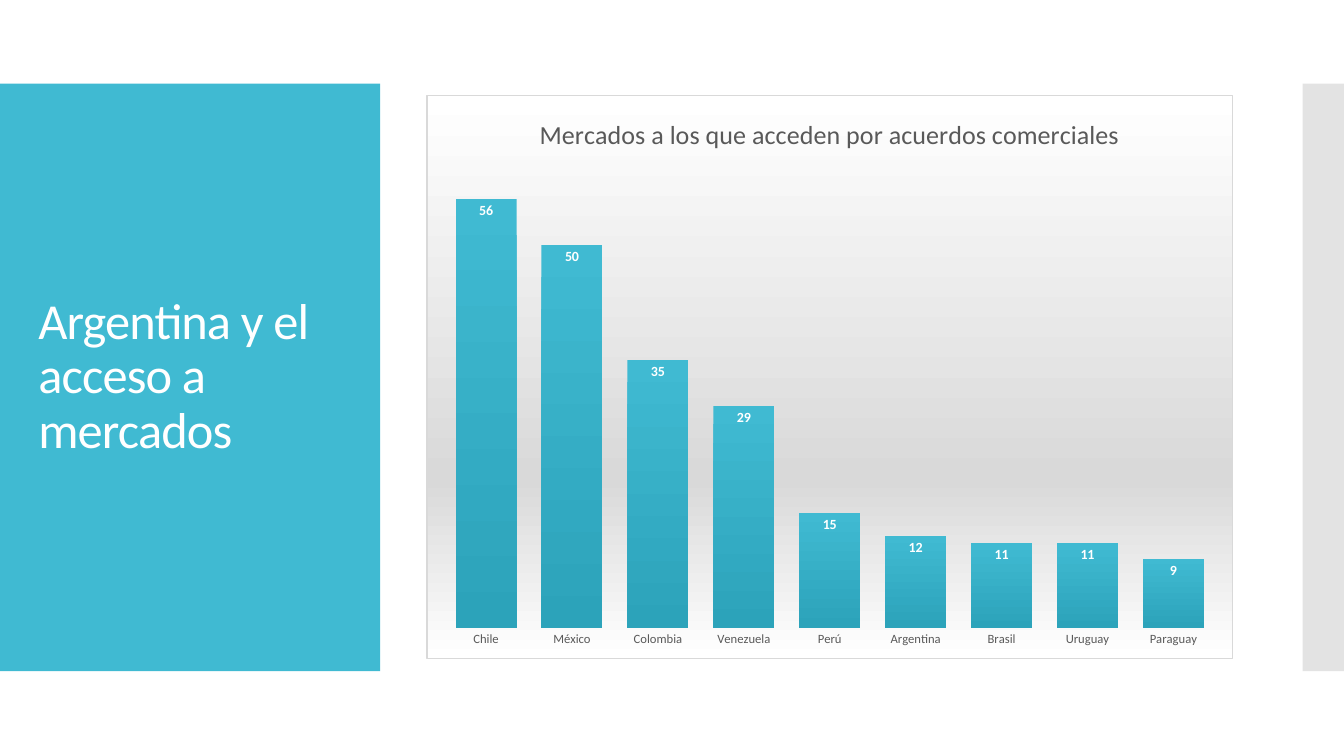
from lxml.etree import SubElement
from pptx import Presentation
from pptx.chart.data import CategoryChartData
from pptx.dml.color import RGBColor
from pptx.enum.chart import XL_CHART_TYPE, XL_LABEL_POSITION, XL_TICK_LABEL_POSITION, XL_TICK_MARK
from pptx.enum.shapes import MSO_SHAPE
from pptx.enum.text import MSO_ANCHOR, PP_ALIGN
from pptx.oxml import parse_xml
from pptx.oxml.ns import nsdecls, qn
from pptx.util import Inches, Pt

COLORS = {
    "teal": "40BAD2", "deep_teal": "2CA3BA", "white": "FFFFFF",
    "silver": "D9D9D9", "edge": "C8C8C8", "text": "595959", "black": "000000",
}
FONT = "Calibri"
MARKETS = {
    "Chile": 56, "México": 50, "Colombia": 35, "Venezuela": 29, "Perú": 15,
    "Argentina": 12, "Brasil": 11, "Uruguay": 11, "Paraguay": 9,
}
PLOT_LAYOUT = {"x": 0.02, "y": 0.13, "w": 0.96, "h": 0.815}


def rgb(name):
    """Return the named colour."""
    return RGBColor.from_string(COLORS[name])


def set_font(font, size, color, bold=False):
    """Format a font."""
    font.name = FONT
    font.size = Pt(size)
    font.bold = bold
    font.color.rgb = rgb(color)


def gradient_xml(stops):
    """Return the XML of a downward gradient from (percent, colour) stops."""
    stop_xml = "".join(
        f'<a:gs pos="{percent * 1000}"><a:srgbClr val="{COLORS[color]}"/></a:gs>'
        for percent, color in stops
    )
    return (f'<a:gradFill {nsdecls("a")}><a:gsLst>{stop_xml}</a:gsLst>'
            '<a:lin ang="5400000" scaled="0"/></a:gradFill>')


def add_band(slide, left, width, color, opacity=100):
    """Add a full-height side band behind the title."""
    band = slide.shapes.add_shape(
        MSO_SHAPE.RECTANGLE, Inches(left), Inches(0.83), Inches(width), Inches(5.83))
    band.shadow.inherit = False
    band.fill.solid()
    band.fill.fore_color.rgb = rgb(color)
    band.line.fill.background()
    if opacity < 100:
        fill_color = band._element.spPr.find(".//" + qn("a:srgbClr"))
        SubElement(fill_color, qn("a:alpha"), val=str(opacity * 1000))
    slide.shapes.title._element.addprevious(band._element)


def format_title(title, text):
    """Place and format the slide title."""
    title.left, title.top = Inches(0.28), Inches(1.23)
    title.width, title.height = Inches(3.22), Inches(5.03)
    frame = title.text_frame
    frame.text = text
    frame.word_wrap = True
    frame.vertical_anchor = MSO_ANCHOR.MIDDLE
    paragraph = frame.paragraphs[0]
    paragraph.alignment = PP_ALIGN.LEFT
    paragraph.line_spacing = 0.9
    set_font(paragraph.font, 36, "white")
    paragraph.runs[0]._r.get_or_add_rPr().set("spc", "-60")


def style_chart_area(chart):
    """Give the chart its background, border and plot position."""
    chart_space = chart._chartSpace
    border = (f'<a:ln {nsdecls("a")} w="9525"><a:solidFill>'
              f'<a:srgbClr val="{COLORS["silver"]}"/></a:solidFill></a:ln>')
    background = gradient_xml([(0, "white"), (68, "silver"), (100, "white")])
    chart_space.find(qn("c:chart")).addnext(
        parse_xml(f'<c:spPr {nsdecls("c")}>{background}{border}</c:spPr>'))

    plot_area = chart_space.find(".//" + qn("c:plotArea"))
    for automatic_layout in plot_area.findall(qn("c:layout")):
        plot_area.remove(automatic_layout)
    places = "".join(f'<c:{key} val="{value}"/>' for key, value in PLOT_LAYOUT.items())
    plot_area.insert(0, parse_xml(
        f'<c:layout {nsdecls("c")}><c:manualLayout><c:layoutTarget val="inner"/>'
        f'<c:xMode val="edge"/><c:yMode val="edge"/>{places}</c:manualLayout></c:layout>'))


def format_axes(chart):
    """Show only the country names and hide the value axis."""
    countries = chart.category_axis
    countries.major_tick_mark = XL_TICK_MARK.NONE
    countries.format.line.fill.background()
    set_font(countries.tick_labels.font, 9, "text")
    scale = chart.value_axis
    scale.minimum_scale, scale.maximum_scale = 0, 60
    scale.has_major_gridlines = False
    scale.tick_label_position = XL_TICK_LABEL_POSITION.NONE
    scale.visible = False


def add_market_chart(slide, heading):
    """Add the column chart of markets reached by each country."""
    data = CategoryChartData()
    data.categories = list(MARKETS)
    data.add_series("Series 1", list(MARKETS.values()))
    chart = slide.shapes.add_chart(
        XL_CHART_TYPE.COLUMN_CLUSTERED,
        Inches(4.23), Inches(0.94), Inches(8), Inches(5.6), data).chart
    set_font(chart.font, 10, "black")
    chart.has_legend = False
    chart.has_title = True
    chart.chart_title.include_in_layout = False
    chart.chart_title.text_frame.text = heading
    set_font(chart.chart_title.text_frame.paragraphs[0].font, 18.6, "text")
    format_axes(chart)
    style_chart_area(chart)

    plot = chart.plots[0]
    plot.gap_width = 41
    plot.vary_by_categories = False
    columns = plot.series[0]
    columns._element.get_or_add_spPr().append(
        parse_xml(gradient_xml([(0, "teal"), (100, "deep_teal")])))
    labels = columns.data_labels
    labels.show_value = True
    labels.position = XL_LABEL_POSITION.INSIDE_END
    set_font(labels.font, 10, "white", bold=True)


def main():
    """Build and save the slide."""
    presentation = Presentation()
    presentation.slide_width, presentation.slide_height = Inches(13.33), Inches(7.5)
    slide = presentation.slides.add_slide(presentation.slide_layouts[5])
    add_band(slide, 0, 3.77, "teal")
    add_band(slide, 12.92, 0.41, "edge", opacity=50)
    format_title(slide.shapes.title, "Argentina y el acceso a mercados")
    add_market_chart(slide, "Mercados a los que acceden por acuerdos comerciales")
    presentation.save("out.pptx")


if __name__ == "__main__":
    main()
